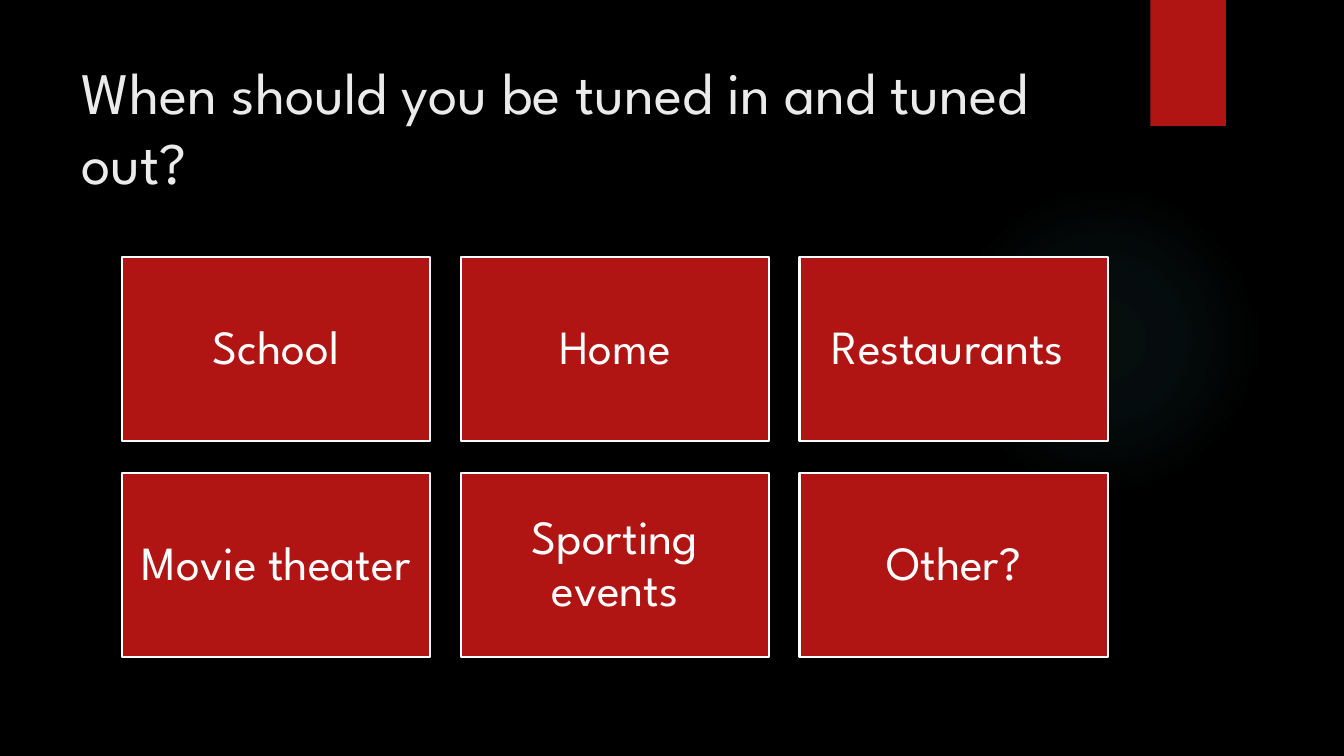
from dataclasses import dataclass

from pptx import Presentation
from pptx import util as u
from pptx.dml.color import RGBColor
from pptx.enum import shapes, text
from pptx.oxml import parse_xml
from pptx.oxml.ns import nsdecls, qn


@dataclass(frozen=True)
class Theme:
    font: str = "League Spartan"
    back: str = "000000"
    red: str = "B01513"
    white: str = "FFFFFF"
    pale: str = "EBEBEB"
    glow: str = "50B9C1"
    head: int = 42
    body: int = 34
    edge: float = 1.5


T = Theme()
LABELS = ["School", "Home", "Restaurants ",
          "Movie theater", "Sporting events", "Other?"]
COLS = 3
LEFT, TOP = 1.21, 2.55
WIDE, HIGH = 3.06, 1.83
GAP_X, GAP_Y = 0.3, 0.31


def assign(item, vals):
    for key, val in vals.items():
        setattr(item, key, val)


def write(shape, words, size, color, inset, para_fmt):
    """Put one styled paragraph in a shape; inset is (side, top)."""
    frame = shape.text_frame
    side, top = map(u.Inches, inset)
    assign(frame, {"word_wrap": True, "margin_left": side, "margin_right": side,
                   "margin_top": top, "margin_bottom": top})
    para = frame.paragraphs[0]
    para.text = words
    assign(para, para_fmt)
    assign(para.font, {"name": T.font, "size": u.Pt(size)})
    para.font.color.rgb = RGBColor.from_string(color)
    return frame


def block(slide, kind, box, fill=None, line=None):
    """Add a flat preset shape."""
    shape = slide.shapes.add_shape(kind, *map(u.Inches, box))
    shape.shadow.inherit = False
    if fill:
        shape.fill.solid()
        shape.fill.fore_color.rgb = RGBColor.from_string(fill)
    else:
        shape.fill.background()
    if line:
        shape.line.color.rgb = RGBColor.from_string(line)
        shape.line.width = u.Pt(T.edge)
    else:
        shape.line.fill.background()
    return shape


def glow(slide, box, stops):
    """Add a soft disc; stops are (place, opacity) in percent."""
    disc = block(slide, shapes.MSO_SHAPE.OVAL, box)
    marks = "".join(
        f'<a:gs pos="{pos * 1000}"><a:srgbClr val="{T.glow}">'
        f'<a:alpha val="{alpha * 1000}"/></a:srgbClr></a:gs>'
        for pos, alpha in stops)
    grad = parse_xml(
        f'<a:gradFill {nsdecls("a")} rotWithShape="1"><a:gsLst>{marks}</a:gsLst>'
        '<a:path path="circle"><a:fillToRect l="50000" t="50000" '
        'r="50000" b="50000"/></a:path></a:gradFill>')
    props = disc.element.spPr
    props.replace(props.find(qn("a:noFill")), grad)


def title(slide, words, box):
    shape = slide.shapes.add_textbox(*map(u.Inches, box))
    write(shape, words, T.head, T.pale, (0.1, 0.05), {})


def card(slide, words, box):
    shape = block(slide, shapes.MSO_SHAPE.RECTANGLE, box, T.red, T.white)
    frame = write(shape, words, T.body, T.white, (0.14, 0.14),
                  {"alignment": text.PP_ALIGN.CENTER, "line_spacing": 0.9})
    frame.vertical_anchor = text.MSO_ANCHOR.MIDDLE


def main():
    deck = Presentation()
    assign(deck, {"slide_width": u.Inches(13.33), "slide_height": u.Inches(7.5)})
    slide = deck.slides.add_slide(deck.slide_layouts[6])

    # Backdrop
    back = slide.background.fill
    back.solid()
    back.fore_color.rgb = RGBColor.from_string(T.back)
    glow(slide, (9.41, 1.83, 3.08, 3.08), [(0, 7), (36, 6), (69, 0)])
    block(slide, shapes.MSO_SHAPE.RECTANGLE, (11.41, 0, 0.75, 1.25), T.red)

    # Heading
    title(slide, "When should you be tuned in and tuned out?",
          (0.71, 0.5, 10.29, 1.53))

    # Grid of places
    for num, words in enumerate(LABELS):
        row, col = divmod(num, COLS)
        card(slide, words, (LEFT + col * (WIDE + GAP_X),
                            TOP + row * (HIGH + GAP_Y), WIDE, HIGH))

    deck.save("out.pptx")


if __name__ == "__main__":
    main()
